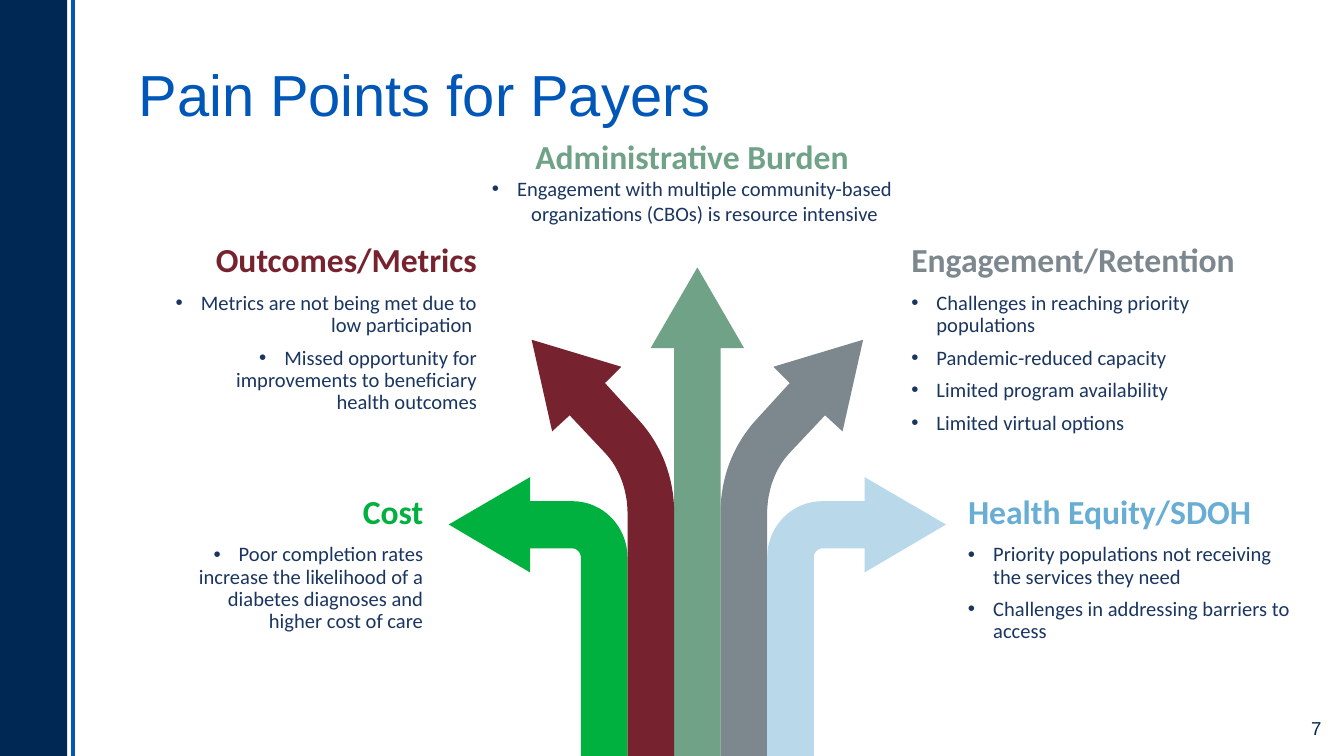
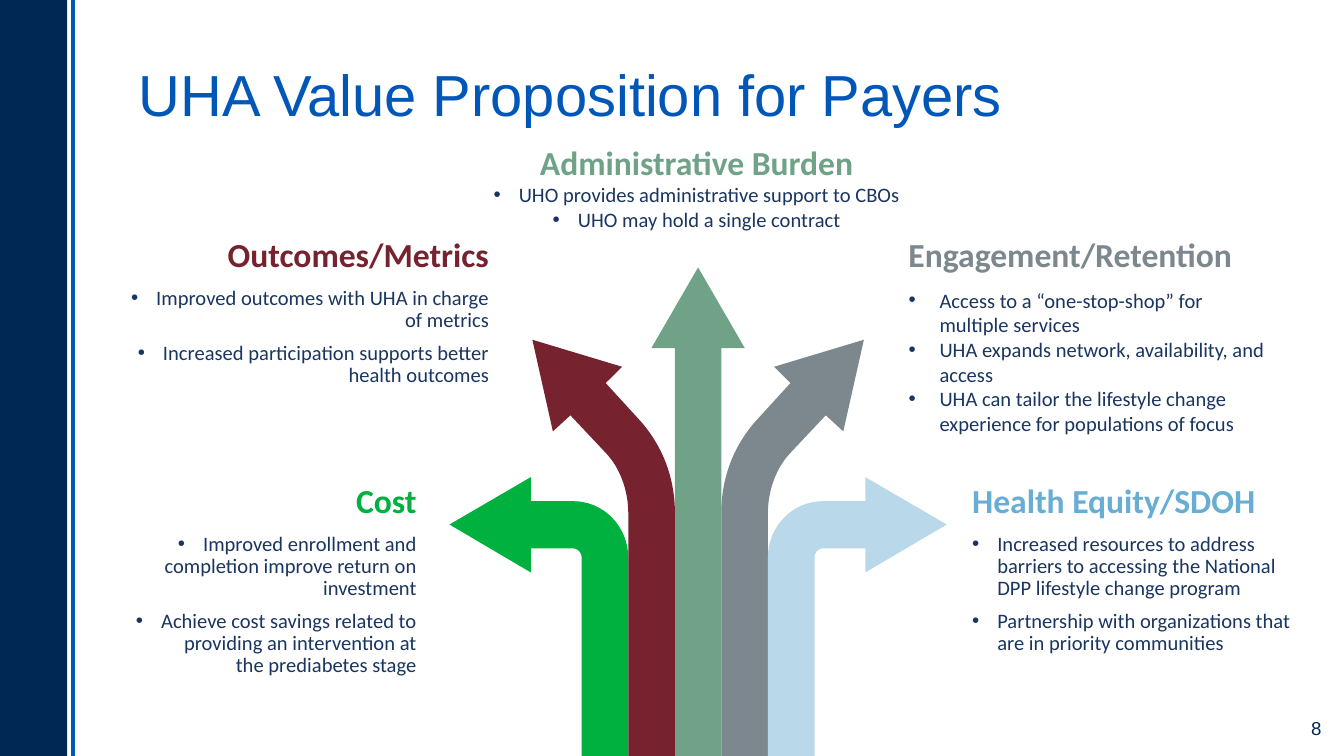
from lxml.etree import SubElement as Sub
from pptx import Presentation
from pptx.dml.color import RGBColor
from pptx.enum.shapes import MSO_CONNECTOR as Link, MSO_SHAPE as Shape
from pptx.enum.text import MSO_ANCHOR as Anchor, MSO_AUTO_SIZE as Auto, PP_ALIGN as Align
from pptx.oxml.ns import qn
from pptx.util import Pt

hue = RGBColor.from_string
NAVY, BLUE, INK = "002855", "0057B8", "193560"
SAGE, GREEN, GRAY, PALE, WINE, SKY = (
    "6FA287", "00B140", "7C878E", "B9D9EB", "76232F", "67ADD4")
WIDE, HIGH = 720, 405


def box(left, top, width, height, anchor=Anchor.TOP, side=0):
    """Add an empty text box to the current slide and return its frame."""
    frame = slide.shapes.add_textbox(Pt(left), Pt(top), Pt(width), Pt(height)).text_frame
    frame.word_wrap = True
    frame.vertical_anchor = anchor
    frame.margin_left = frame.margin_right = Pt(side)
    return frame


def write(frame, text, size=11, color=INK, font="Calibri", bold=False,
          align=Align.LEFT, indent=0, lead=1, gap=0):
    """Append one paragraph; an indent makes it a bullet."""
    first = not frame.text
    para = frame.paragraphs[0] if first else frame.add_paragraph()
    para.alignment = align
    para.line_spacing = lead
    para.space_before = Pt(0 if first else gap)
    if indent:
        props = para._p.get_or_add_pPr()
        props.set("marL", str(Pt(indent)))
        props.set("indent", str(-Pt(indent)))
        Sub(props, qn("a:buFont")).set("typeface", "Arial")
        Sub(props, qn("a:buChar")).set("char", "•")
    run = para.add_run()
    run.text = text
    run.font.size, run.font.name, run.font.bold = Pt(size), font, bold
    run.font.color.rgb = hue(color)


# Arrow outlines, x measured from the middle arrow's axis.
# Two numbers are a point; six are a curve: two controls and its end.
tall = [(0, 143.3), (-25, 186.5), (-12.5, 186.5), (-12.5, HIGH),
        (12.5, HIGH), (12.5, 186.5), (25, 186.5)]
slant = [(88.8, 182), (40.7, 196.5), (49.5, 205.2), (31.2, 225.2),
         (18.8, 239, 12.4, 256.3, 12.4, 275), (12.4, HIGH), (37.4, HIGH), (37.4, 275),
         (37.4, 262.8, 41.8, 250.6, 49.5, 242.6), (68.4, 222.5), (77.8, 231.1)]
bent = [(133.2, 281), (89.6, 255.6), (89.6, 268.5), (67, 268.5),
        (50.4, 268.5, 37.4, 282.2, 37.4, 298.8), (37.4, HIGH), (62.4, HIGH), (62.4, 298.8),
        (62.4, 295.9, 64.6, 293.8, 67, 293.8), (89.6, 293.8), (89.6, 306.7)]
arrows = [(tall, 1, SAGE), (bent, -1, GREEN), (slant, 1, GRAY),
          (bent, 1, PALE), (slant, -1, WINE)]

# Topics: name, colour, alignment
topics = [("Engagement/Retention", GRAY, Align.LEFT),
          ("Health Equity/SDOH", SKY, Align.LEFT),
          ("Outcomes/Metrics", WINE, Align.RIGHT),
          ("Cost", GREEN, Align.RIGHT)]
airy = dict(indent=13.5, lead=0.9, gap=5.6)
tight = dict(indent=16.6)

# Slides: number, title, axis, top box, its bullets, then for each topic
# the aligned edge, top, heading width, list width, list height, style, bullets
pages = [
    (7, "Pain Points for Payers", 373.6, (240.5, 69.4, 260.6, 56),
     ["Engagement with multiple community-based organizations (CBOs) is resource intensive"],
     [(488.2, 124.4, 234, 192.2, 85.7, airy,
       ["Challenges in reaching priority populations", "Pandemic-reduced capacity",
        "Limited program availability", "Limited virtual options"]),
      (518.6, 259.2, 173.5, 172.8, 61.2, airy,
       ["Priority populations not receiving the services they need",
        "Challenges in addressing barriers to access"]),
      (255.6, 124.6, 173.5, 172.8, 73.4, airy,
       ["Metrics are not being met due to low participation ",
        "Missed opportunity for improvements to beneficiary health outcomes"]),
      (226.8, 259.2, 173.5, 139, 55.4, airy,
       ["Poor completion rates increase the likelihood of a diabetes diagnoses "
        "and higher cost of care"])]),
    (8, "UHA Value Proposition for Payers", 374, (180, 72.4, 386.6, 56),
     ["UHO provides administrative support to CBOs", "UHO may hold a single contract"],
     [(486.7, 121.7, 237.6, 195.8, 87.1, tight,
       ["Access to a “one-stop-shop” for multiple services",
        "UHA expands network, availability, and access",
        "UHA can tailor the lifestyle change experience for populations of focus"]),
      (520.8, 253.4, 173.5, 172.8, 73.4, airy,
       ["Increased resources to address barriers to accessing the National DPP "
        "lifestyle change program",
        "Partnership with organizations that are in priority communities"]),
      (262, 121.7, 198.7, 195.1, 61.2, airy,
       ["Improved outcomes with UHA in charge of metrics",
        "Increased participation supports better health outcomes"]),
      (223.2, 253.4, 173.5, 154.8, 85, airy,
       ["Improved enrollment and completion improve return on investment",
        "Achieve cost savings related to providing an intervention at the "
        "prediabetes stage"])]),
]

deck = Presentation()
deck.slide_width, deck.slide_height = Pt(WIDE), Pt(HIGH)

for number, name, axis, place, notes, lists in pages:
    slide = deck.slides.add_slide(deck.slide_layouts[5])

    # Side band, rule and page number
    rule = slide.shapes.add_connector(Link.STRAIGHT, Pt(38.9), Pt(HIGH), Pt(38.9), Pt(0))
    rule.line.color.rgb = hue(BLUE)
    rule.line.width = Pt(2.25)
    Sub(rule._element.spPr, qn("a:effectLst"))
    band = slide.shapes.add_shape(Shape.RECTANGLE, Pt(0), Pt(0), Pt(36), Pt(HIGH))
    parts = [(band, NAVY)]
    write(box(648, 379.4, 67, 21.6, Anchor.MIDDLE, 7.2), str(number),
          size=10, color=NAVY, font="Arial", align=Align.RIGHT)

    # Title
    title = slide.shapes.title
    title.left, title.top, title.width, title.height = Pt(67), Pt(23.8), Pt(617), Pt(48.2)
    title.text_frame.auto_size = Auto.NONE
    title.text_frame.vertical_anchor = Anchor.BOTTOM
    write(title.text_frame, name, size=31, color=BLUE, font="Arial")

    # Arrows, with curves cut into short steps
    group = slide.shapes.add_group_shape()
    for path, flip, color in arrows:
        dots = []
        for node in path:
            if len(node) == 2:
                dots.append(node)
                continue
            (ax, ay), (bx, by, cx, cy, dx, dy) = dots[-1], node
            for step in range(1, 17):
                t = step / 16
                u = 1 - t
                k = u ** 3, 3 * u * u * t, 3 * u * t * t, t ** 3
                dots.append((k[0] * ax + k[1] * bx + k[2] * cx + k[3] * dx,
                             k[0] * ay + k[1] * by + k[2] * cy + k[3] * dy))
        dots = [(Pt(axis + flip * x), Pt(y)) for x, y in dots]
        pen = group.shapes.build_freeform(*dots[0])
        pen.add_line_segments(dots[1:], close=True)
        parts.append((pen.convert_to_shape(), color))

    for part, color in parts:
        part.shadow.inherit = False
        part.fill.solid()
        part.fill.fore_color.rgb = hue(color)
        part.line.fill.background()

    # Topics beside the arrows
    for (head, color, align), (edge, top, width, span, tall_by, style, items) in zip(topics, lists):
        pull = align == Align.RIGHT
        write(box(edge - pull * width, top, width, 28.8, Anchor.BOTTOM), head,
              size=18, color=color, bold=True, align=align)
        frame = box(edge - pull * span, top + 28.8, span, tall_by)
        for item in items:
            write(frame, item, align=align, **style)

    # Topic above the middle arrow
    frame = box(*place)
    write(frame, "Administrative Burden", size=18, color=SAGE, bold=True, align=Align.CENTER)
    for note in notes:
        write(frame, note, align=Align.CENTER, indent=13.5)

deck.save("out.pptx")
